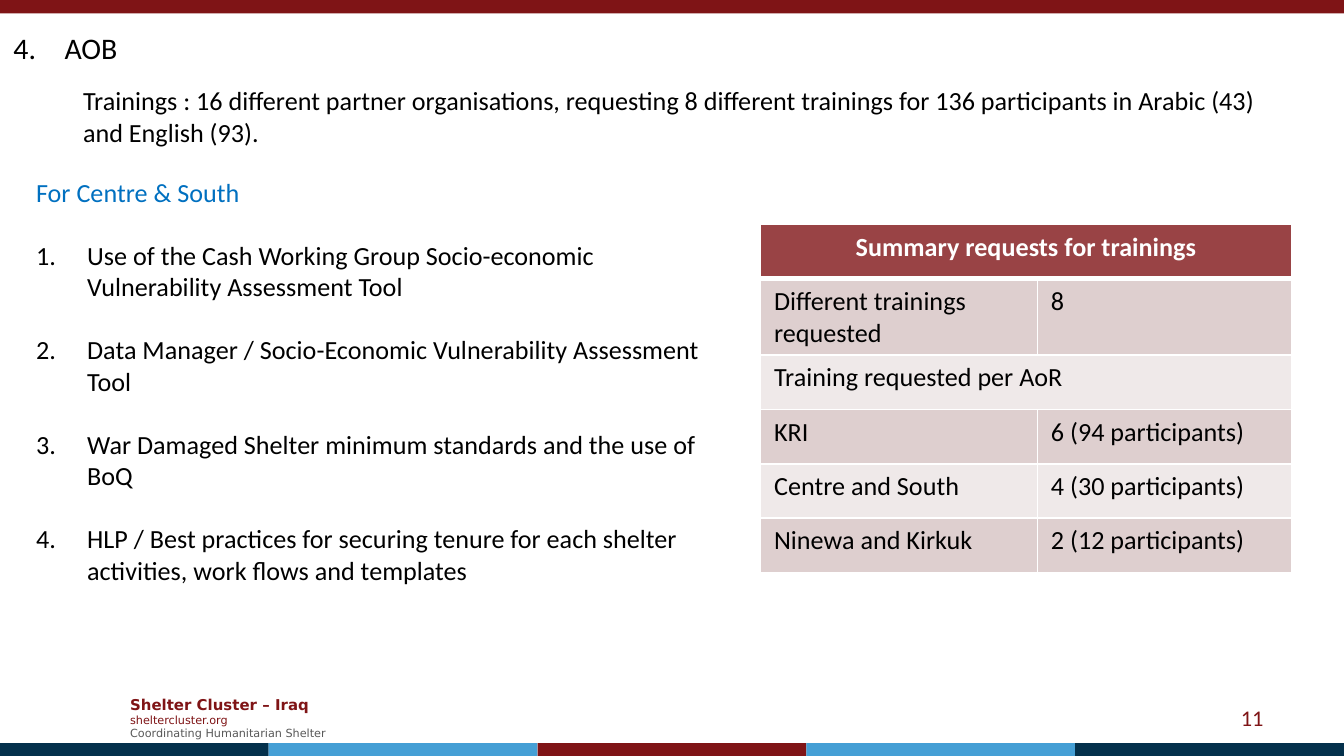
from dataclasses import dataclass
from lxml import etree
from pptx import Presentation
from pptx.dml.color import RGBColor
from pptx.enum.shapes import MSO_SHAPE
from pptx.enum.text import MSO_ANCHOR, MSO_AUTO_SIZE, PP_ALIGN
from pptx.oxml.ns import qn
from pptx.util import Inches, Pt

LEFT, CENTER, RIGHT = PP_ALIGN.LEFT, PP_ALIGN.CENTER, PP_ALIGN.RIGHT
TOP, MIDDLE = MSO_ANCHOR.TOP, MSO_ANCHOR.MIDDLE
RECT, FIXED = MSO_SHAPE.RECTANGLE, MSO_AUTO_SIZE.NONE


@dataclass
class Theme:
    font: str = "Calibri"
    brand: str = "DejaVu Sans"
    black: str = "000000"
    white: str = "FFFFFF"
    red: str = "7F1416"
    navy: str = "04314C"
    sky: str = "459FD5"
    blue: str = "0070C0"
    gray: str = "595959"
    head: str = "994345"
    dark: str = "DECFCF"
    light: str = "EFE9E9"
    title: int = 16
    body: int = 14
    page: int = 12
    name: int = 8
    small: int = 6


def put(para, text, font=Theme.font, size=Theme.body, color=Theme.black,
        bold=False, align=LEFT, start=None, before=0):
    """Write formatted text, numbered from start when it is given."""
    if start:
        props = para._p.get_or_add_pPr()
        props.set("marL", str(Inches(0.38)))
        props.set("indent", str(-Inches(0.38)))
        etree.SubElement(props, qn("a:buFont"), typeface="+mj-lt")
        etree.SubElement(props, qn("a:buAutoNum"), type="arabicPeriod", startAt=str(start))
    para.alignment = align
    para.space_before = Pt(before)
    run = para.add_run()
    run.text = text
    run.font.name, run.font.size, run.font.bold = font, Pt(size), bold
    run.font.color.rgb = RGBColor.from_string(color)


class Deck:
    """Hold the theme and the current slide."""

    def __init__(self, theme):
        self.theme = theme
        self.file = Presentation()
        self.file.slide_width = Inches(10)
        self.file.slide_height = Inches(10) * 9 // 16
        self.slide = self.file.slides.add_slide(self.file.slide_layouts[5])

    def bar(self, x, y, width, color):
        shape = self.slide.shapes.add_shape(
            RECT, Inches(x), Inches(y), Inches(width), Inches(0.1))
        shape.shadow.inherit = False
        shape.fill.solid()
        shape.fill.fore_color.rgb = RGBColor.from_string(color)
        shape.line.fill.background()

    def title(self, box, text, **style):
        shape = self.slide.shapes.title
        shape.left, shape.top, shape.width, shape.height = map(Inches, box)
        frame = shape.text_frame
        frame.auto_size, frame.vertical_anchor = FIXED, MIDDLE
        put(frame.paragraphs[0], text, **style)

    def text(self, box, lines, anchor=TOP):
        frame = self.slide.shapes.add_textbox(*map(Inches, box)).text_frame
        frame.word_wrap, frame.vertical_anchor = True, anchor
        for i, (line, style) in enumerate(lines):
            para = frame.add_paragraph() if i else frame.paragraphs[0]
            put(para, line, **style)

    def edge(self, cell, low):
        props = cell._tc.get_or_add_tcPr()
        for i, side in enumerate("LRTB"):
            width = Pt(low if side == "B" else 1)
            line = etree.Element(qn("a:ln" + side), w=str(width))
            fill = etree.SubElement(line, qn("a:solidFill"))
            etree.SubElement(fill, qn("a:srgbClr"), val=self.theme.white)
            props.insert(i, line)

    def table(self, box, widths, rows):
        t = self.theme
        table = self.slide.shapes.add_table(
            len(rows), len(widths), *map(Inches, box)).table
        table.first_row = table.horz_banding = False
        for col, width in zip(table.columns, widths):
            col.width = Inches(width)
        for r, row in enumerate(rows):
            tint = (t.dark if r % 2 else t.light) if r else t.head
            for c in range(len(widths)):
                cell = table.cell(r, c)
                cell.fill.solid()
                cell.fill.fore_color.rgb = RGBColor.from_string(tint)
                self.edge(cell, 1 if r else 3)
            if len(row) == 1:
                table.cell(r, 0).merge(table.cell(r, len(widths) - 1))
            for c, text in enumerate(row):
                put(table.cell(r, c).text_frame.paragraphs[0], text, bold=r == 0,
                    color=t.black if r else t.white,
                    align=LEFT if r else CENTER)


def main():
    t = Theme()
    deck = Deck(t)
    deck.bar(0, 0, 10, t.red)
    for i, color in enumerate((t.navy, t.sky, t.red, t.sky, t.navy)):
        deck.bar(2 * i, 5.53, 2, color)
    deck.text((0.87, 5.12, 1.73, 0.44), [
        ("Shelter Cluster – Iraq", dict(font=t.brand, size=t.name, color=t.red, bold=True)),
        ("sheltercluster.org", dict(font=t.brand, size=t.small, color=t.red)),
        ("Coordinating Humanitarian Shelter", dict(font=t.brand, size=t.small, color=t.gray)),
    ], MIDDLE)
    deck.text((7.17, 5.19, 2.33, 0.3),
              [("11", dict(size=t.page, color=t.red, align=RIGHT))], MIDDLE)
    deck.title((0, 0.17, 10, 0.37), "AOB", size=t.title, start=4)
    deck.text((0.52, 0.58, 9.03, 0.57), [
        ("Trainings : 16 different partner organisations, requesting 8 different "
         "trainings for 136 participants in Arabic (43) and English (93).", {})])
    deck.table((5.66, 1.67, 3.95, 2.43), (2.06, 1.89), [
        ("Summary requests for trainings",),
        ("Different trainings requested", "8"),
        ("Training requested per AoR",),
        ("KRI", "6 (94 participants)"),
        ("Centre and South", "4 (30 participants)"),
        ("Ninewa and Kirkuk", "2 (12 participants)"),
    ])
    topics = (
        "Use of the Cash Working Group Socio-economic Vulnerability Assessment Tool",
        "Data Manager / Socio-Economic Vulnerability Assessment Tool",
        "War Damaged Shelter minimum standards and the use of BoQ",
        "HLP / Best practices for securing tenure for each shelter activities, "
        "work flows and templates",
    )
    deck.text((0.17, 1.26, 5.22, 3.16), [
        ("For Centre & South", dict(color=t.blue)),
        *((topic, dict(start=i, before=17)) for i, topic in enumerate(topics, 1)),
    ])
    deck.file.save("out.pptx")


if __name__ == "__main__":
    main()
